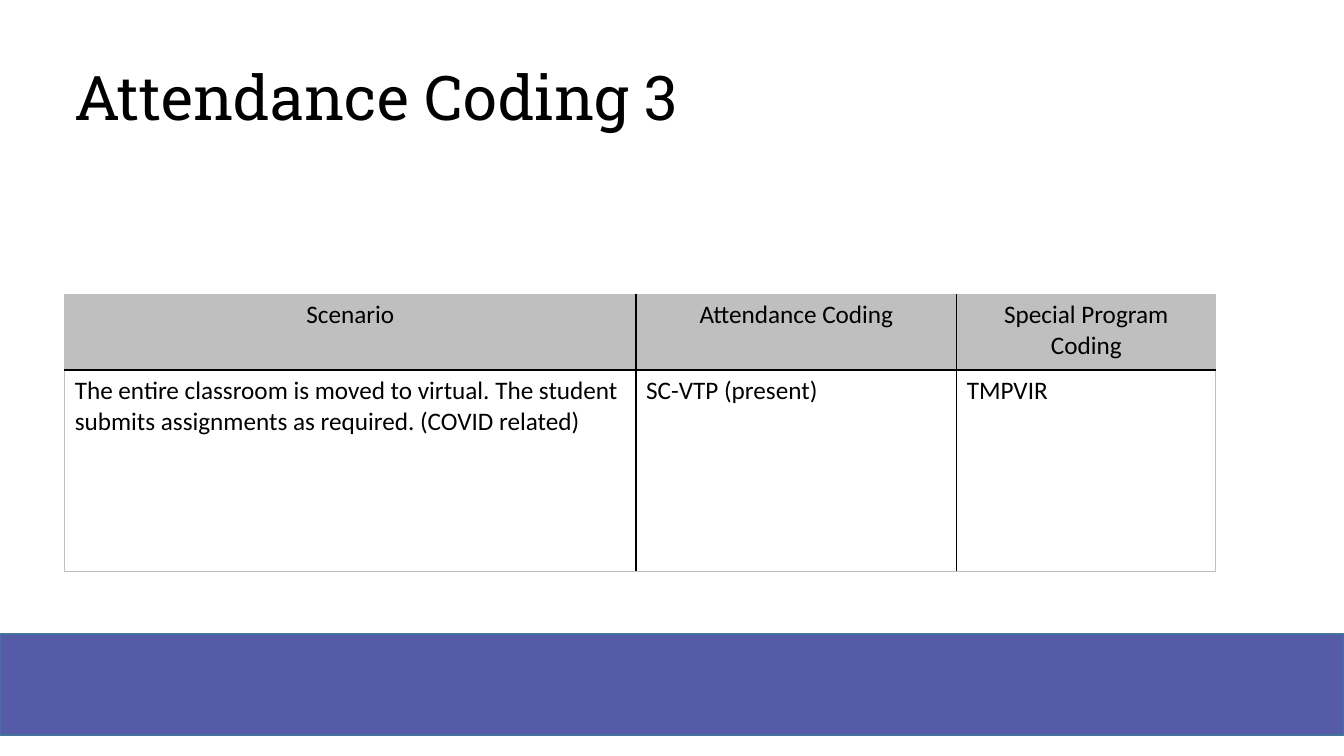
import pptx
import pptx.util
import pptx.dml.color
import pptx.enum.shapes
import pptx.enum.text
import pptx.oxml
import pptx.oxml.ns

Cm = pptx.util.Cm
Pt = pptx.util.Pt
ALIGN = pptx.enum.text.PP_ALIGN

TITLE = "Attendance Coding 3"
ROWS = [
    ("Scenario", "Attendance Coding", "Special Program Coding"),
    (
        "The entire classroom is moved to virtual. The student submits "
        "assignments as required. (COVID related)",
        "SC-VTP (present)",
        "TMPVIR",
    ),
]
COLUMN_WIDTHS = [14.4, 8.08, 6.53]
ROW_HEIGHTS = [1.91, 5.08]
COLORS = {
    "text": "000000",
    "band": "565BA7",
    "band_line": "43739E",
    "header": "BFBFBF",
    "inner": "000000",
    "outer": "BFBFBF",
}
SLIDE_WIDTH, SLIDE_HEIGHT = 33.87, 19.05
LEFT = 1.63


def color(name):
    return pptx.dml.color.RGBColor.from_string(COLORS[name])


def add_text(paragraph, text, size, font_name, alignment):
    paragraph.alignment = alignment
    run = paragraph.add_run()
    run.text = text
    run.font.size = Pt(size)
    run.font.name = font_name
    run.font.bold = False
    run.font.color.rgb = color("text")


def set_borders(cell, borders):
    properties = cell._tc.get_or_add_tcPr()
    for index, (side, name, width) in enumerate(borders):
        line = pptx.oxml.parse_xml(
            f'<a:{side} {pptx.oxml.ns.nsdecls("a")} w="{Pt(width)}">'
            f'<a:solidFill><a:srgbClr val="{COLORS[name]}"/></a:solidFill>'
            f'</a:{side}>'
        )
        properties.insert(index, line)


def add_band(slide):
    band = slide.shapes.add_shape(
        pptx.enum.shapes.MSO_SHAPE.RECTANGLE,
        Cm(0), Cm(15.98), Cm(SLIDE_WIDTH), Cm(2.54),
    )
    band.shadow.inherit = False
    band.fill.solid()
    band.fill.fore_color.rgb = color("band")
    band.line.color.rgb = color("band_line")
    band.line.width = Pt(1)


def format_title(title):
    title.left, title.top = Cm(LEFT), Cm(1.02)
    title.width, title.height = Cm(30.48), Cm(3.05)
    title.text_frame.vertical_anchor = pptx.enum.text.MSO_ANCHOR.MIDDLE
    paragraph = title.text_frame.paragraphs[0]
    paragraph.line_spacing = 0.9
    add_text(paragraph, TITLE, 44, "Roboto Slab", ALIGN.LEFT)


def add_coding_table(slide):
    last_row, last_column = len(ROWS) - 1, len(COLUMN_WIDTHS) - 1
    table = slide.shapes.add_table(
        len(ROWS), len(COLUMN_WIDTHS), Cm(LEFT), Cm(7.42),
        Cm(sum(COLUMN_WIDTHS)), Cm(sum(ROW_HEIGHTS)),
    ).table
    table.horz_banding = False
    for column, width in zip(table.columns, COLUMN_WIDTHS):
        column.width = Cm(width)
    for row, height in zip(table.rows, ROW_HEIGHTS):
        row.height = Cm(height)
    for row_index, texts in enumerate(ROWS):
        is_header = row_index == 0
        for column_index, text in enumerate(texts):
            cell = table.cell(row_index, column_index)
            alignment = ALIGN.CENTER if is_header else ALIGN.LEFT
            add_text(cell.text_frame.paragraphs[0], text, 18, "Calibri", alignment)
            if is_header:
                cell.fill.solid()
                cell.fill.fore_color.rgb = color("header")
            else:
                cell.fill.background()
            edges = [
                ("lnL", column_index == 0, 1),
                ("lnR", column_index == last_column, 1),
                ("lnT", is_header, 1 if is_header else 1.5),
                ("lnB", row_index == last_row, 1.5 if is_header else 1),
            ]
            set_borders(cell, [
                (side, "outer" if is_outer else "inner", width)
                for side, is_outer, width in edges
            ])


def main():
    presentation = pptx.Presentation()
    presentation.slide_width = Cm(SLIDE_WIDTH)
    presentation.slide_height = Cm(SLIDE_HEIGHT)
    slide = presentation.slides.add_slide(presentation.slide_layouts[5])
    add_band(slide)
    format_title(slide.shapes.title)
    add_coding_table(slide)
    presentation.save("out.pptx")


if __name__ == "__main__":
    main()
